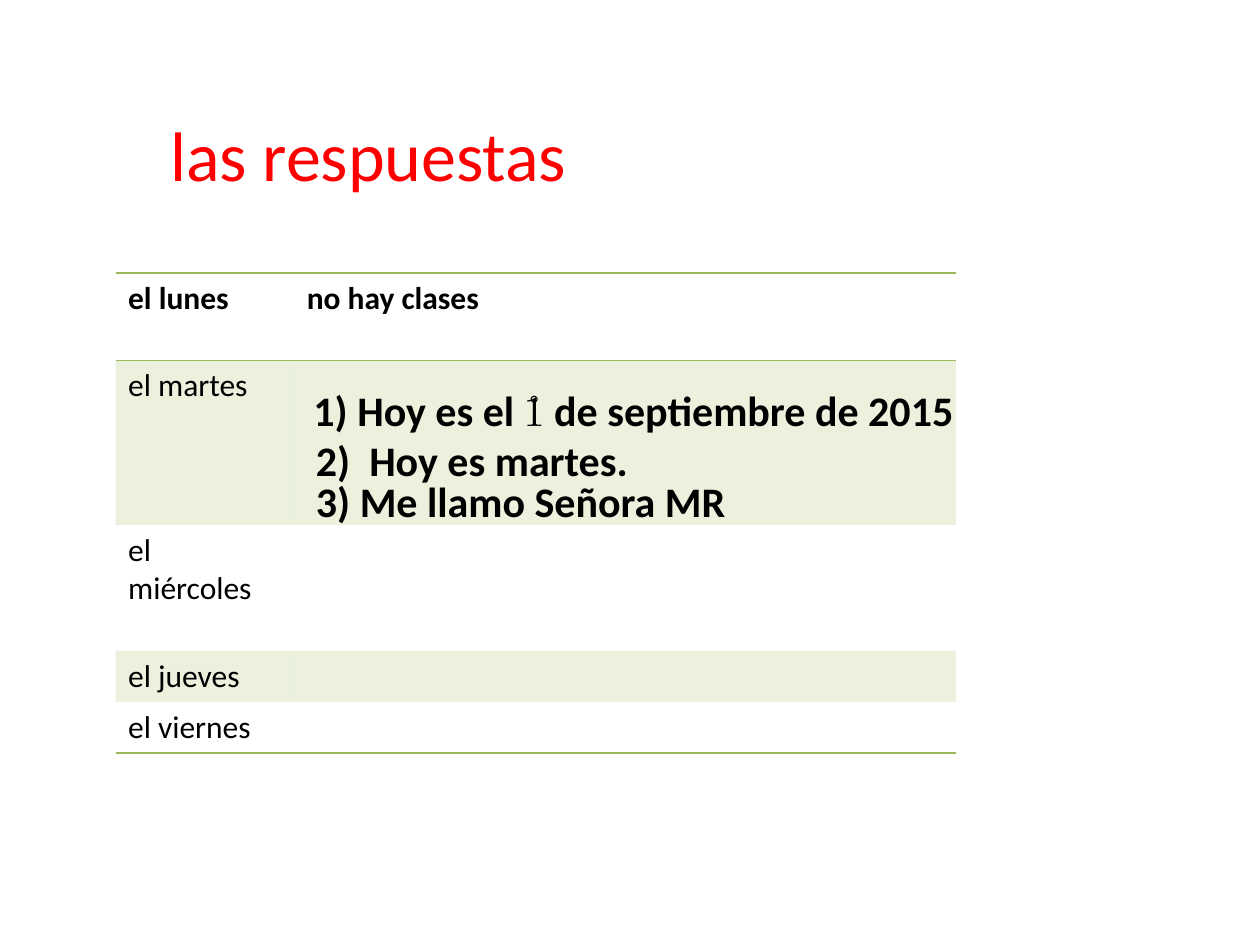
from lxml.etree import SubElement
from pptx import Presentation
from pptx.dml.color import RGBColor
from pptx.enum.text import MSO_AUTO_SIZE
from pptx.oxml.ns import qn
from pptx.util import Cm, Pt

COLOURS = {"title": "FF0000", "text": "000000", "green": "9BBB59"}
FONT = "Calibri"
WEEK = [
    ("el lunes", "no hay clases"),
    ("el martes", ""),
    ("el miércoles", ""),
    ("el jueves", ""),
    ("el viernes", ""),
]
COLUMN_WIDTHS = [3.6, 13.34]
ROW_HEIGHTS = [1.77, 3.31, 2.54, 1.03, 1.03]
PLAIN_TABLE_STYLE = "{2D5ABB26-0587-4C30-8999-92F81FD0307C}"


def write(para, text, size=18, colour="text", bold=False):
    span = para.add_run()
    span.text = text
    span.font.name = FONT
    span.font.size = Pt(size)
    span.font.bold = bold
    span.font.color.rgb = RGBColor.from_string(COLOURS[colour])


def add_line_of_text(page, box, text, **text_format):
    """Place one unwrapped line of text in box: left, top, width, height in cm."""
    frame = page.shapes.add_textbox(*map(Cm, box)).text_frame
    frame.word_wrap = False
    frame.auto_size = MSO_AUTO_SIZE.SHAPE_TO_FIT_TEXT
    write(frame.paragraphs[0], text, **text_format)


def add_solid_fill(parent, colour):
    fill = SubElement(parent, qn("a:solidFill"))
    return SubElement(fill, qn("a:srgbClr"), val=COLOURS[colour])


def format_cell(cell, sides, banded):
    """Draw green rules on the given sides, then a pale green band if asked."""
    properties = cell._tc.get_or_add_tcPr()
    for side in sides:
        rule = SubElement(properties, qn(f"a:{side}"), w=str(Pt(1)))
        add_solid_fill(rule, "green")
    if banded:
        SubElement(add_solid_fill(properties, "green"), qn("a:alpha"), val="20000")
    else:
        cell.fill.background()


def add_week_table(page, left, top):
    shape = page.shapes.add_table(
        len(WEEK), len(COLUMN_WIDTHS), Cm(left), Cm(top),
        Cm(sum(COLUMN_WIDTHS)), Cm(sum(ROW_HEIGHTS)))
    table = shape.table
    table.horz_banding = False
    table._tbl.tblPr.find(qn("a:tableStyleId")).text = PLAIN_TABLE_STYLE
    for column, width in zip(table.columns, COLUMN_WIDTHS):
        column.width = Cm(width)
    rules = {0: ["lnT", "lnB"], len(WEEK) - 1: ["lnB"]}
    for index, (row, texts) in enumerate(zip(table.rows, WEEK)):
        row.height = Cm(ROW_HEIGHTS[index])
        for cell, text in zip(row.cells, texts):
            format_cell(cell, rules.get(index, []), banded=index % 2 == 1)
            if text:
                write(cell.text_frame.paragraphs[0], text, bold=index == 0)


def add_answers(page, left, top):
    answers = [
        (0, 0, 13.54, "1) Hoy es el 1̊ de septiembre de 2015"),
        (0.05, 1.02, 6.86, "2)  Hoy es martes."),
        (0.05, 1.85, 8.84, "3) Me llamo Señora MR"),
    ]
    for across, down, width, text in answers:
        add_line_of_text(page, (left + across, top + down, width, 1.27),
                         text, size=24, bold=True)


def main():
    deck = Presentation()
    deck.slide_width, deck.slide_height = Cm(25.4), Cm(19.05)
    page = deck.slides.add_slide(deck.slide_layouts[6])
    add_week_table(page, 2.33, 5.5)
    add_line_of_text(page, (3.18, 2.12, 8.59, 1.96), "las respuestas",
                     size=40, colour="title")
    add_answers(page, 6.07, 7.62)
    deck.save("out.pptx")


if __name__ == "__main__":
    main()
